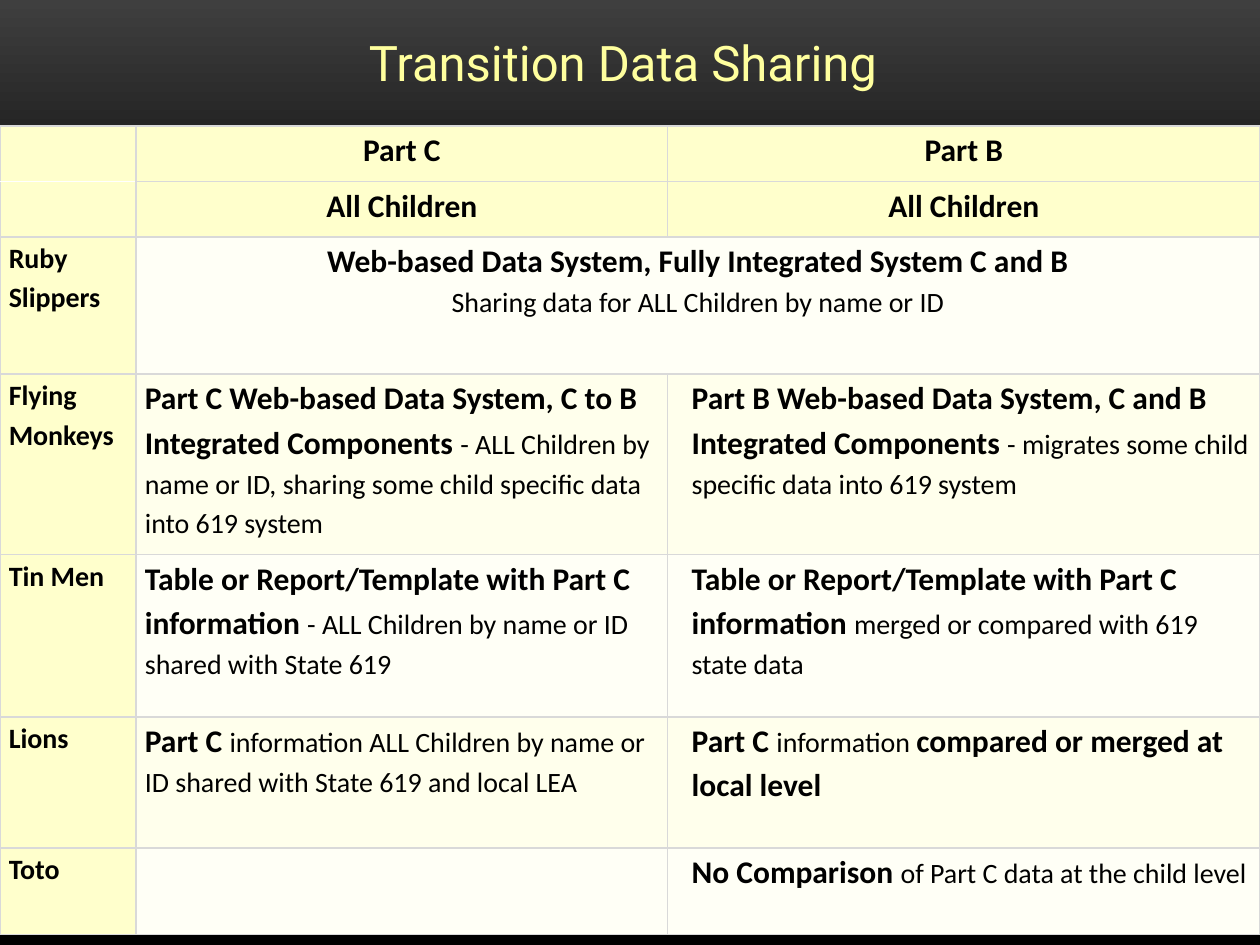
from lxml import etree
from pptx import Presentation
from pptx import util as u
from pptx.dml import color
from pptx.enum import text
from pptx.oxml import ns

COLORS = {
    "glow": "3F3F3F", "black": "000000", "title": "FFFF9E", "label": "FFFFCC",
    "light": "FFFFF6", "cream": "FFFFEC", "border": "D9D9D9",
}
BIG, SMALL = 18, 16
LEFT, CENTER = text.PP_ALIGN.LEFT, text.PP_ALIGN.CENTER


def rgb(name):
    return color.RGBColor.from_string(COLORS[name])


def add_border(cell, side, position):
    line = etree.Element(ns.qn(f"a:ln{side}"), w=str(u.Pt(1)))
    fill = etree.SubElement(line, ns.qn("a:solidFill"))
    etree.SubElement(fill, ns.qn("a:srgbClr"), val=COLORS["border"])
    cell._tc.get_or_add_tcPr().insert(position, line)


prs = Presentation()
prs.slide_width, prs.slide_height = u.Inches(10), u.Inches(7.5)
slide = prs.slides.add_slide(prs.slide_layouts[6])

# Background fading down to black
backdrop = slide.background.fill
backdrop.gradient()
backdrop.gradient_angle = 270
for stop, name, position in zip(backdrop.gradient_stops, ("glow", "black"), (0, 0.31)):
    stop.color.rgb = rgb(name)
    stop.position = position

# Table content: each cell is a list of paragraphs, each paragraph a list of
# (text, size, bold) runs
part_c, part_b, all_children = [
    [[(heading, BIG, True)]] for heading in ("Part C", "Part B", "All Children")
]
rows = [
    ("", part_c, part_b),
    ("", all_children, all_children),
    ("Ruby Slippers",
     [[("Web-based Data System, Fully Integrated System C and B", BIG, True)],
      [("Sharing data for ALL Children by name or ID", SMALL, False)]],
     []),
    ("Flying Monkeys",
     [[("Part C Web-based Data System, C to B Integrated Components ", BIG, True),
       ("- ALL Children by name or ID, sharing some child specific data into 619 system",
        SMALL, False)]],
     [[("Part B Web-based Data System, C and B Integrated Components ", BIG, True),
       ("- migrates some child specific data into 619 system", SMALL, False)]]),
    ("Tin Men",
     [[("Table or Report/Template with Part C information ", BIG, True),
       ("- ALL Children by name or ID shared with State 619", SMALL, False)]],
     [[("Table or Report/Template with Part C information ", BIG, True),
       ("merged or compared with 619 state data", SMALL, False)]]),
    ("Lions",
     [[("Part C ", BIG, True),
       ("information ALL Children by name or ID shared with State 619 and local LEA",
        SMALL, False)]],
     [[("Part C ", BIG, True), ("information ", SMALL, False),
       ("compared or merged at local level", BIG, True)]]),
    ("Toto",
     [],
     [[("No Comparison ", BIG, True),
       ("of Part C data at the child level", SMALL, False)]]),
]
col_widths = (1.08, 4.22, 4.7)
row_heights = (0.44, 0.44, 1.09, 1.43, 1.29, 1.04, 0.69)
HEADER_ROWS, MERGED_ROW = 2, 2

# Table frame
levels = slide.shapes.add_table(
    len(rows), len(col_widths), u.Inches(0), u.Inches(1),
    u.Inches(10), u.Inches(sum(row_heights))).table
levels.first_row = levels.horz_banding = False
for column, width in zip(levels.columns, col_widths):
    column.width = u.Inches(width)
for row, height in zip(levels.rows, row_heights):
    row.height = u.Inches(height)
levels.cell(MERGED_ROW, 1).merge(levels.cell(MERGED_ROW, 2))

# Table cells
for r, (label, *entries) in enumerate(rows):
    label_paragraphs = [[(label, SMALL, True)]] if label else []
    for c, paragraphs in enumerate([label_paragraphs, *entries]):
        cell = levels.cell(r, c)
        cell.margin_left = cell.margin_right = u.Inches(0.07)
        cell.margin_top = cell.margin_bottom = 0
        cell.fill.solid()
        if r < HEADER_ROWS or c == 0:
            cell.fill.fore_color.rgb = rgb("label")
        else:
            cell.fill.fore_color.rgb = rgb("cream" if r % 2 else "light")

        # The two empty corner cells read as one: no line between them
        open_side = {(0, 0): "B", (1, 0): "T"}.get((r, c), "")
        for position, side in enumerate(s for s in "LRTB" if s != open_side):
            add_border(cell, side, position)

        centered = c > 0 and r <= MERGED_ROW
        for i, runs in enumerate(paragraphs):
            frame = cell.text_frame
            paragraph = frame.add_paragraph() if i else frame.paragraphs[0]
            paragraph.alignment = CENTER if centered else LEFT
            paragraph.line_spacing = 1.15
            if c == 2 and not centered:
                paragraph._p.get_or_add_pPr().set("marL", str(u.Inches(0.12)))
            for words, size, bold in runs:
                run = paragraph.add_run()
                run.text = words
                run.font.name = "Calibri"
                run.font.size = u.Pt(size)
                run.font.bold = bold
                run.font.color.rgb = rgb("black")

# Title
title = slide.shapes.add_textbox(
    u.Inches(2.83), u.Inches(0.21), u.Inches(5.58), u.Inches(0.57)).text_frame
title.word_wrap = True
title.auto_size = text.MSO_AUTO_SIZE.SHAPE_TO_FIT_TEXT
heading = title.paragraphs[0].add_run()
heading.text = "Transition Data Sharing"
heading.font.name = "Roboto"
heading.font.size = u.Pt(28)
heading.font.color.rgb = rgb("title")

prs.save("out.pptx")
